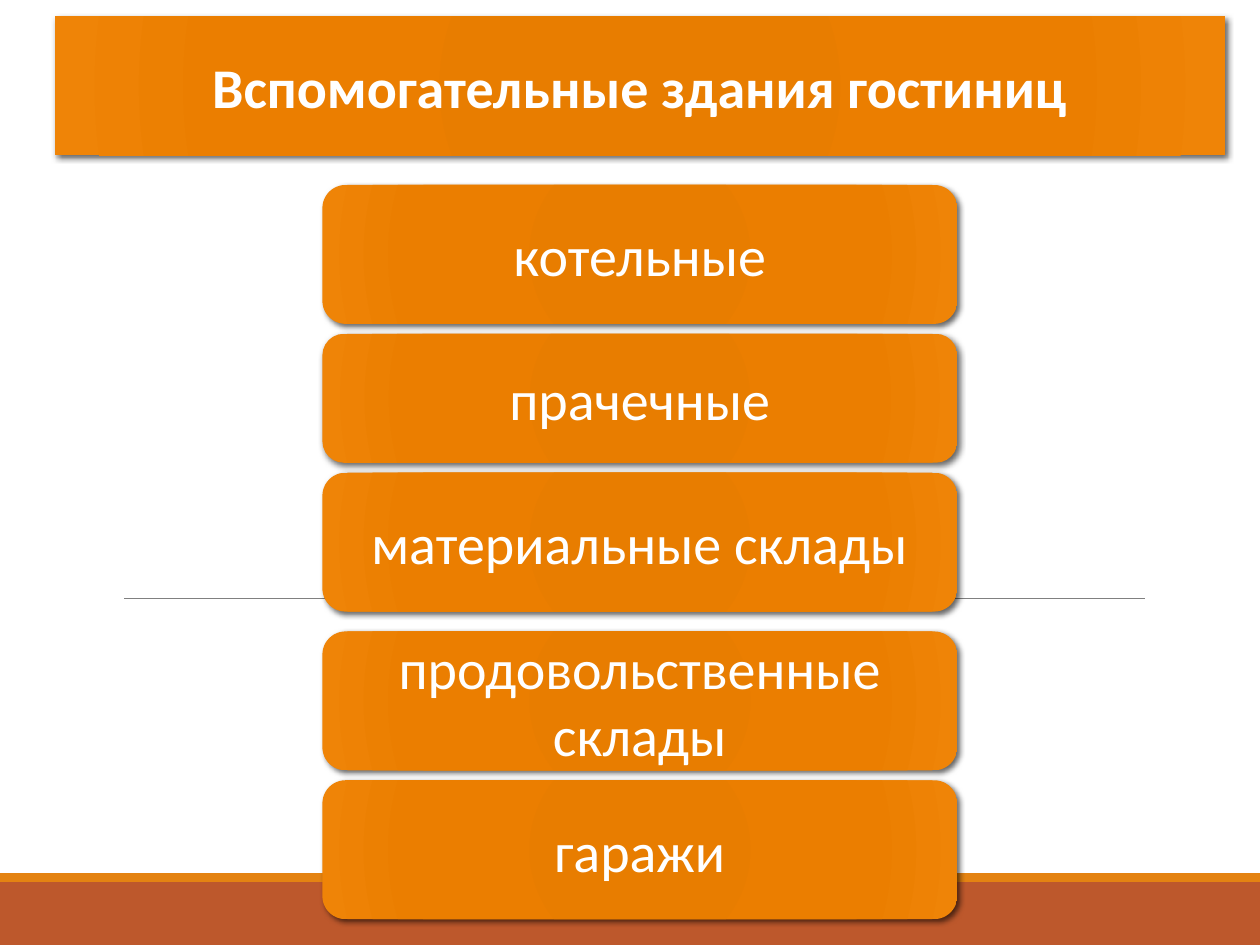
"""Build a slide listing the auxiliary buildings of hotels."""
from lxml import etree
from pptx import Presentation
from pptx.dml.color import RGBColor as RGB
from pptx.enum.shapes import MSO_CONNECTOR as CONN, MSO_SHAPE as SHAPE
from pptx.enum.text import MSO_ANCHOR as ANCHOR, MSO_AUTO_SIZE as AUTO, PP_ALIGN as ALIGN
from pptx.oxml import parse_xml
from pptx.oxml.ns import nsdecls, qn
from pptx.util import Cm, Pt

COLORS = {"rust": "BD582C", "orange": "E48312", "rule": "808080",
          "text": "FFFFFF", "shadow": "000000"}
STOPS = {0: "E57B00", 34: "E87D00", 70: "EB7E00", 100: "EF8407"}
FONT = {"name": "Calibri", "size": Pt(32)}
FRAME = {"word_wrap": True, "auto_size": AUTO.NONE, "vertical_anchor": ANCHOR.MIDDLE}
GEOMETRY = '<a:prstGeom {} prst="roundRect"><a:avLst/></a:prstGeom>'
ITEMS = [("котельные", 2.8, 0.2), ("прачечные", 2.6, 0.2),
         ("материальные склады", 2.8, 0.4),
         ("продовольственные склады", 2.8, 0.2), ("гаражи", 2.8, 0.2)]


def set_all(obj, values):
    """Set every attribute named in values on obj."""
    for name, value in values.items():
        setattr(obj, name, value)


def add_bar(s, top, height, color):
    """Add a full-width footer bar."""
    sp = s.shapes.add_shape(SHAPE.RECTANGLE, 0, Cm(top), Cm(25.4), Cm(height))
    sp.shadow.inherit = False
    sp.fill.solid()
    sp.fill.fore_color.rgb = RGB.from_string(COLORS[color])
    sp.line.fill.background()


def add_rule(s, left, right, y):
    """Add a thin horizontal line."""
    ln = s.shapes.add_connector(CONN.STRAIGHT, Cm(left), Cm(y), Cm(right), Cm(y))
    ln.line.color.rgb = RGB.from_string(COLORS["rule"])
    ln.line.width = Pt(0.5)
    etree.SubElement(ln._element.spPr, qn("a:effectLst"))


def style_panel(sp):
    """Give a panel its gradient and soft shadow."""
    stops = "".join(f'<a:gs pos="{pos * 1000}"><a:srgbClr val="{color}"/></a:gs>'
                    for pos, color in STOPS.items())
    gradient = (f'<a:gradFill {nsdecls("a")} rotWithShape="1"><a:gsLst>{stops}</a:gsLst>'
                '<a:path path="circle"><a:fillToRect l="100000" t="100000" '
                'r="100000" b="100000"/></a:path></a:gradFill>')
    shadow = (f'<a:effectLst {nsdecls("a")}><a:outerShdw blurRad="{Pt(3.5)}" '
              f'dist="{Pt(2)}" dir="2700000" algn="ctr" rotWithShape="0">'
              f'<a:srgbClr val="{COLORS["shadow"]}"><a:alpha val="60000"/></a:srgbClr>'
              '</a:outerShdw></a:effectLst>')
    spPr = sp._element.spPr
    spPr.append(parse_xml(gradient))
    sp.line.fill.background()
    spPr.append(parse_xml(shadow))


def write_text(sp, text, bold=False):
    """Write one centred paragraph in a panel."""
    tf = sp.text_frame
    set_all(tf, FRAME)
    p = tf.paragraphs[0]
    p.alignment = ALIGN.CENTER
    r = p.add_run()
    r.text = text
    set_all(r.font, {**FONT, "bold": bold})
    r.font.color.rgb = RGB.from_string(COLORS["text"])


def add_title(s, text):
    """Turn the title placeholder into a rounded panel."""
    sp = s.shapes.title
    set_all(sp, {"left": Cm(1.1), "top": Cm(0.33), "width": Cm(23.6), "height": Cm(2.8)})
    sp._element.spPr.append(parse_xml(GEOMETRY.format(nsdecls("a"))))
    style_panel(sp)
    write_text(sp, text, bold=True)


def add_panel(s, text, top, height):
    """Add a rounded panel for one kind of building."""
    sp = s.shapes.add_shape(SHAPE.ROUNDED_RECTANGLE, Cm(6.5), Cm(top), Cm(12.8), Cm(height))
    style_panel(sp)
    write_text(sp, text)


def main():
    """Build and save the slide."""
    prs = Presentation()
    set_all(prs, {"slide_width": Cm(25.4), "slide_height": Cm(19.05)})
    s = prs.slides.add_slide(prs.slide_layouts[5])
    add_bar(s, 17.78, 1.27, "rust")
    add_bar(s, 17.6, 0.18, "orange")
    add_rule(s, 2.51, 23.09, 12.07)
    add_title(s, "Вспомогательные здания гостиниц")
    top = 3.73
    for text, height, gap in ITEMS:
        add_panel(s, text, top, height)
        top += height + gap
    prs.save("out.pptx")


if __name__ == "__main__":
    main()
